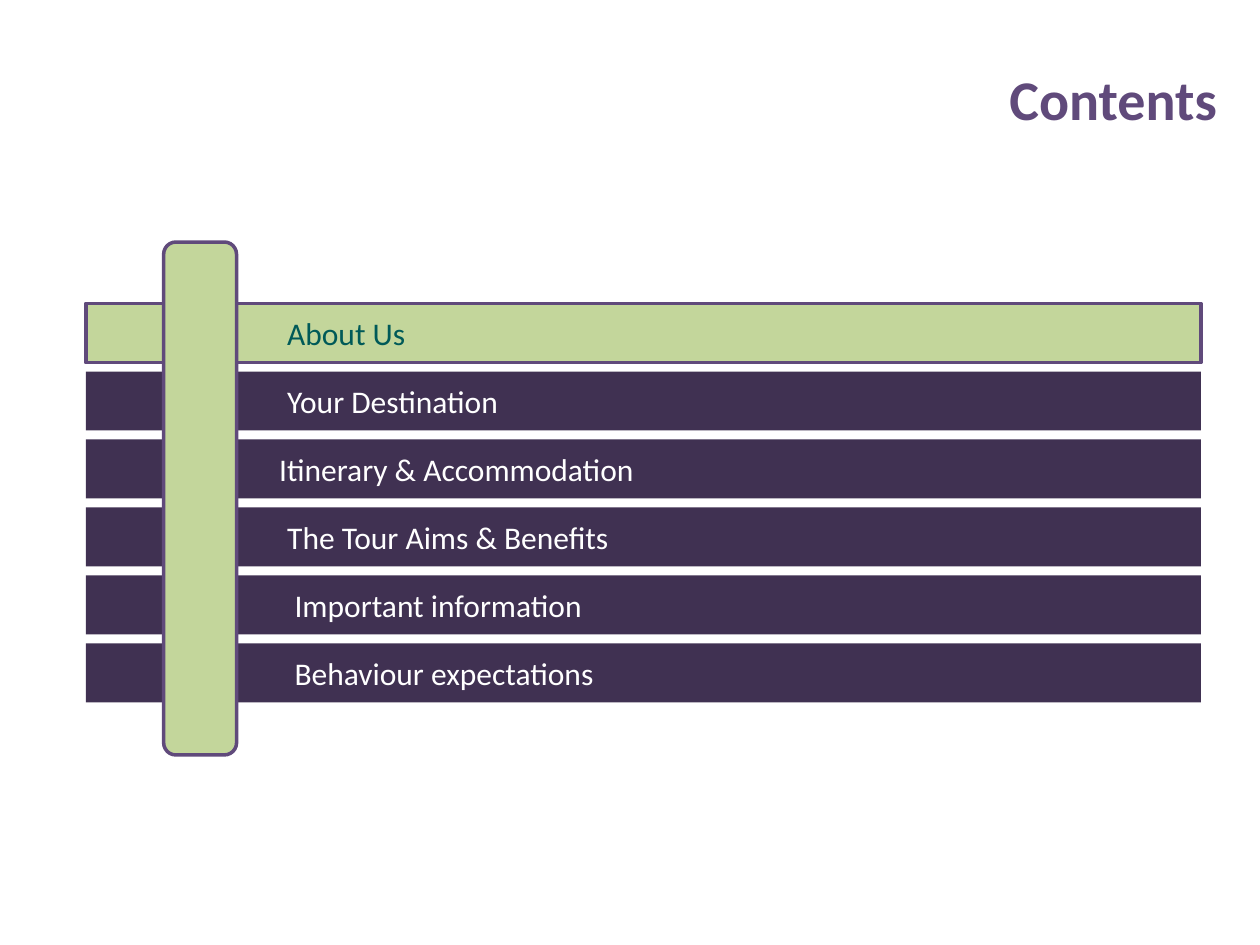
from pptx import Presentation
from pptx.dml.color import RGBColor
from pptx.enum.shapes import MSO_SHAPE as Shape
from pptx.enum.text import MSO_ANCHOR as Anchor, PP_ALIGN as Align
from pptx.util import Cm, Pt

PURPLE, DARK, GREEN, TEAL, WHITE = "604A7B", "403152", "C3D69B", "005A58", "FFFFFF"


def color(value):
    return RGBColor.from_string(value)


class ContentsSlide:
    """Hold the style and the current slide, and draw its elements."""

    font_name = "Calibri"

    def __init__(self, deck):
        self.slide = deck.slides.add_slide(deck.slide_layouts[5])

    def style(self, paragraph, size, ink, align, bold=False):
        paragraph.alignment = align
        font = paragraph.font
        font.name, font.size, font.bold = self.font_name, Pt(size), bold
        font.color.rgb = color(ink)

    def title(self, text, left, top, width, height):
        heading = self.slide.shapes.title
        heading.left, heading.top = Cm(left), Cm(top)
        heading.width, heading.height = Cm(width), Cm(height)
        heading.text_frame.text = text
        heading.text_frame.vertical_anchor = Anchor.TOP
        self.style(heading.text_frame.paragraphs[0], 32, PURPLE, Align.RIGHT, bold=True)

    def block(self, preset, left, top, width, height, fill, outlined):
        block = self.slide.shapes.add_shape(preset, Cm(left), Cm(top), Cm(width), Cm(height))
        block.shadow.inherit = False
        block.fill.solid()
        block.fill.fore_color.rgb = color(fill)
        if outlined:
            block.line.color.rgb = color(PURPLE)
            block.line.width = Pt(2)
        else:
            block.line.fill.background()
        return block

    def entry(self, text, top, indent, current):
        fill, ink = (GREEN, TEAL) if current else (DARK, WHITE)
        bar = self.block(Shape.RECTANGLE, 1.73, top, 22.48, 1.19, fill, current)
        frame = bar.text_frame
        frame.text = text
        frame.margin_left = Cm(indent)
        frame.vertical_anchor = Anchor.MIDDLE
        self.style(frame.paragraphs[0], 18, ink, Align.LEFT)


def main():
    deck = Presentation()
    deck.slide_width, deck.slide_height = Cm(25.4), Cm(19.05)
    contents = ContentsSlide(deck)
    contents.title("Contents", 11.25, 1.17, 13.54, 1.63)

    entries = [
        ("About Us", 4.06),
        ("Your Destination", 4.06),
        ("Itinerary & Accommodation", 3.9),
        ("The Tour Aims & Benefits", 4.06),
        ("Important information", 4.21),
        ("Behaviour expectations", 4.21),
    ]
    for index, (topic, indent) in enumerate(entries):
        contents.entry(topic, 6.12 + 1.37 * index, indent, current=index == 0)

    contents.block(Shape.ROUNDED_RECTANGLE, 3.3, 4.88, 1.47, 10.34, GREEN, outlined=True)
    deck.save("out.pptx")


if __name__ == "__main__":
    main()
